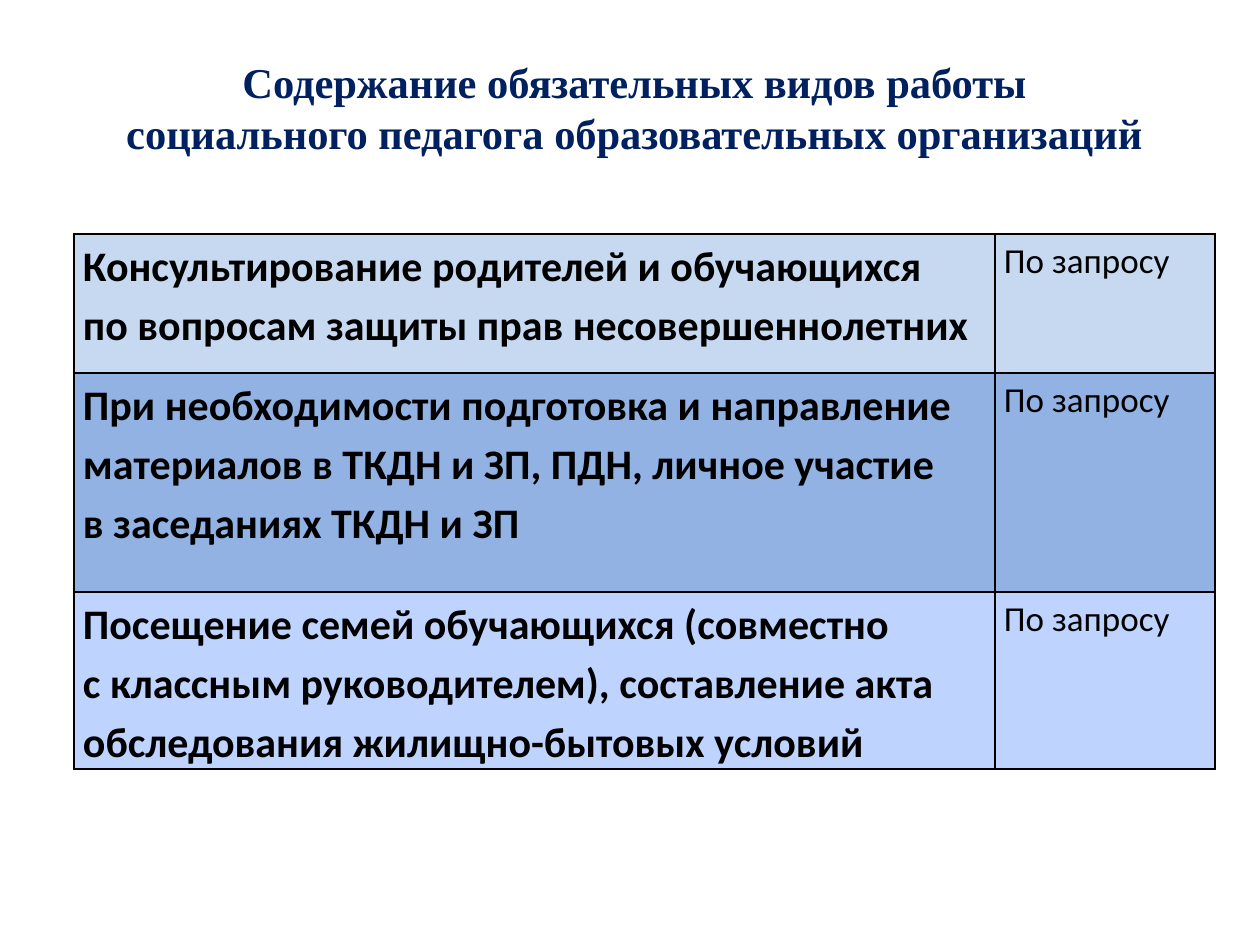
from dataclasses import dataclass

from lxml import etree
from pptx import Presentation
from pptx.dml.color import RGBColor
from pptx.enum.text import MSO_ANCHOR, PP_ALIGN
from pptx.oxml.ns import qn
from pptx.util import Emu, Pt

PX = 914400 // 126
MIDDLE = MSO_ANCHOR.MIDDLE
CENTER = PP_ALIGN.CENTER

NAVY = RGBColor(0x00, 0x20, 0x60)
BLACK = RGBColor(0x00, 0x00, 0x00)
PALE = RGBColor(0xC6, 0xD9, 0xF1)
BLUE = RGBColor(0x92, 0xB2, 0xE4)
LIGHT = RGBColor(0xBF, 0xD3, 0xFF)


@dataclass
class Font:
    name: str
    size: float
    bold: bool
    color: RGBColor


@dataclass
class Task:
    text: str
    height: int
    fill: RGBColor


HEAD = Font("Times New Roman", 24.3, True, NAVY)
BODY = Font("Calibri", 24, True, BLACK)
NOTE = Font("Calibri", 20, False, BLACK)

TITLE = "Содержание обязательных видов работы\nсоциального педагога образовательных организаций"
TERM = "По запросу"
WIDTHS = (921, 220)
TASKS = (
    Task("Консультирование родителей и обучающихся\n"
         "по вопросам защиты прав несовершеннолетних", 139, PALE),
    Task("При необходимости подготовка и направление материалов "
         "в ТКДН и ЗП, ПДН, личное участие\nв заседаниях ТКДН и ЗП", 219, BLUE),
    Task("Посещение семей обучающихся (совместно\nс классным руководителем), "
         "составление акта обследования жилищно-бытовых условий", 177, LIGHT),
)


def px(value: int) -> Emu:
    return Emu(value * PX)


def write(para, text: str, font: Font) -> None:
    for index, line in enumerate(text.split("\n")):
        if index:
            para.add_line_break()
        run = para.add_run()
        run.text = line
        run.font.name = font.name
        run.font.size = Pt(font.size)
        run.font.bold = font.bold
        run.font.color.rgb = font.color


def border(cell) -> None:
    props = cell._tc.get_or_add_tcPr()
    for side in ("lnL", "lnR", "lnT", "lnB"):
        line = etree.SubElement(props, qn(f"a:{side}"), w=str(Pt(1)))
        solid = etree.SubElement(line, qn("a:solidFill"))
        etree.SubElement(solid, qn("a:srgbClr"), val=str(BLACK))


def draw_cell(cell, text: str, font: Font, fill: RGBColor) -> None:
    border(cell)
    cell.fill.solid()
    cell.fill.fore_color.rgb = fill
    cell.margin_left = cell.margin_right = px(9)
    cell.margin_top = cell.margin_bottom = 0
    para = cell.text_frame.paragraphs[0]
    para.line_spacing = 1.15
    write(para, text, font)


def draw_table(slide) -> None:
    total = sum(task.height for task in TASKS)
    table = slide.shapes.add_table(
        len(TASKS), len(WIDTHS), px(74), px(234), px(sum(WIDTHS)), px(total)).table
    for col, width in zip(table.columns, WIDTHS):
        col.width = px(width)
    for index, task in enumerate(TASKS):
        table.rows[index].height = px(task.height)
        draw_cell(table.cell(index, 0), task.text, BODY, task.fill)
        draw_cell(table.cell(index, 1), TERM, NOTE, task.fill)


def draw_title(slide) -> None:
    frame = slide.shapes.add_textbox(px(63), px(28), px(1143), px(158)).text_frame
    frame.word_wrap = True
    frame.vertical_anchor = MIDDLE
    para = frame.paragraphs[0]
    para.alignment = CENTER
    write(para, TITLE, HEAD)


def main() -> None:
    deck = Presentation()
    deck.slide_width, deck.slide_height = px(1260), px(945)
    slide = deck.slides.add_slide(deck.slide_layouts[6])
    draw_table(slide)
    draw_title(slide)
    deck.save("out.pptx")


if __name__ == "__main__":
    main()
